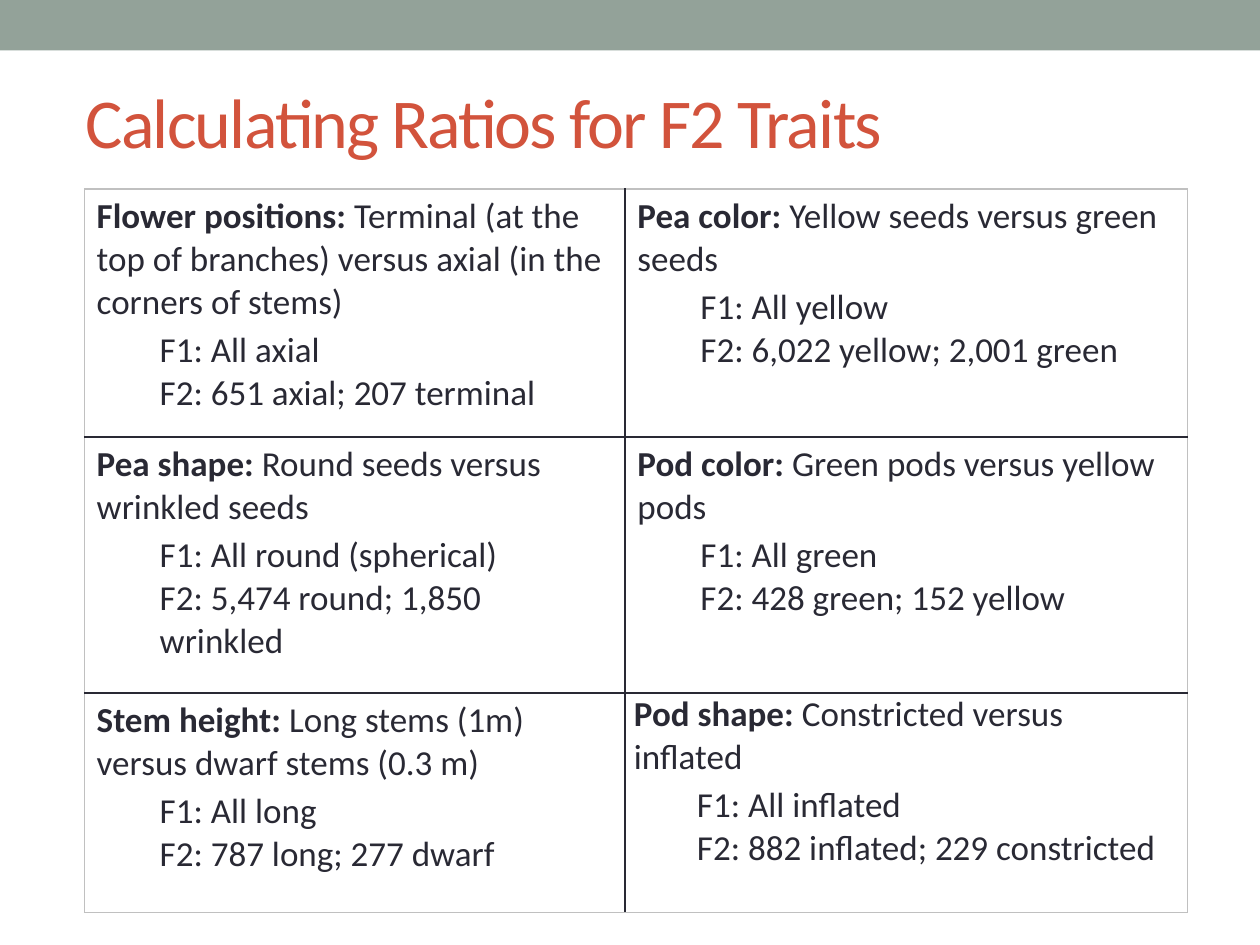
from lxml.etree import SubElement
from pptx import Presentation
from pptx.dml.color import RGBColor
from pptx.enum.shapes import MSO_SHAPE as Shape
from pptx.enum.text import MSO_ANCHOR as Anchor
from pptx.oxml import parse_xml
from pptx.oxml.ns import nsdecls, qn
from pptx.util import Cm, Pt

SAGE = RGBColor(0x93, 0xA2, 0x99)
RUST = RGBColor(0xD2, 0x53, 0x3C)
INK = RGBColor(0x29, 0x29, 0x34)
SILVER = RGBColor(0xC0, 0xC0, 0xC0)

TRAITS = [
    [("Flower positions: ", "Terminal (at the top of branches) versus axial (in the corners of stems)",
      "F1: All axial", "F2: 651 axial; 207 terminal"),
     ("Pea color: ", "Yellow seeds versus green seeds",
      "F1: All yellow", "F2: 6,022 yellow; 2,001 green")],
    [("Pea shape: ", "Round seeds versus wrinkled seeds",
      "F1: All round (spherical)", "F2: 5,474 round; 1,850 wrinkled"),
     ("Pod color: ", "Green pods versus yellow pods",
      "F1: All green", "F2: 428 green; 152 yellow")],
    [("Stem height: ", "Long stems (1m) versus dwarf stems (0.3 m)",
      "F1: All long", "F2: 787 long; 277 dwarf"),
     ("Pod shape: ", "Constricted versus inflated",
      "F1: All inflated", "F2: 882 inflated; 229 constricted")],
]
COLUMN_WIDTHS = [10.9, 11.33]
ROW_HEIGHTS = [5, 5.16, 4.42]
CELL_MARGINS = {"margin_left": Cm(0.25), "margin_right": Cm(0.38),
                "margin_top": Cm(0.13), "margin_bottom": Cm(0.13)}
TIGHT_MARGINS = {"margin_left": Cm(0.18), "margin_top": 0, "margin_bottom": 0}


def apply(target, values):
    """Set every attribute named in values on the target."""
    for name, value in values.items():
        setattr(target, name, value)


class TraitSlide:
    """Holds the text style and the current slide."""

    body = {"name": "Calibri", "size": Pt(20)}
    heading = {"name": "Calibri", "size": Pt(40)}

    def __init__(self, deck):
        self.slide = deck.slides.add_slide(deck.slide_layouts[5])

    def band(self, width, height):
        band = self.slide.shapes.add_shape(Shape.RECTANGLE, 0, 0, Cm(width), Cm(height))
        band.shadow.inherit = False
        band.fill.solid()
        band.fill.fore_color.rgb = SAGE
        band.line.fill.background()

    def title(self, text, left, top, width, height):
        title = self.slide.shapes.title
        apply(title, {"left": Cm(left), "top": Cm(top), "width": Cm(width), "height": Cm(height)})
        title.text_frame.vertical_anchor = Anchor.MIDDLE
        paragraph = title.text_frame.paragraphs[0]
        paragraph.alignment = 1
        run = self.run(paragraph, text, self.heading, RUST)
        run.font._element.set("spc", "-100")

    def run(self, paragraph, text, style, color, bold=False):
        run = paragraph.add_run()
        run.text = text
        apply(run.font, {**style, "bold": bold})
        run.font.color.rgb = color
        return run

    def trait(self, cell, name, contrast, *generations):
        frame = cell.text_frame
        self.run(frame.paragraphs[0], name, self.body, INK, bold=True)
        self.run(frame.paragraphs[0], contrast, self.body, INK)
        for index, generation in enumerate(generations):
            paragraph = frame.add_paragraph()
            paragraph.space_before = Pt(0 if index else 3)
            paragraph._p.get_or_add_pPr().set("marL", str(Cm(1.27)))
            self.run(paragraph, generation, self.body, INK)

    def borders(self, cell, outer_sides):
        properties = cell._tc.get_or_add_tcPr()
        for index, side in enumerate("LRTB"):
            color, width = (SILVER, Pt(0.75)) if side in outer_sides else (INK, Pt(1))
            line = parse_xml(f'<a:ln{side} {nsdecls("a")} w="{width}"/>')
            fill = SubElement(line, qn("a:solidFill"))
            SubElement(fill, qn("a:srgbClr")).set("val", str(color))
            properties.insert(index, line)

    def table(self, traits, left, top):
        rows, columns = len(traits), len(traits[0])
        table = self.slide.shapes.add_table(
            rows, columns, Cm(left), Cm(top),
            Cm(sum(COLUMN_WIDTHS)), Cm(sum(ROW_HEIGHTS))).table
        apply(table, {"first_row": False, "horz_banding": False})
        for column, width in zip(table.columns, COLUMN_WIDTHS):
            column.width = Cm(width)
        for row, height in zip(table.rows, ROW_HEIGHTS):
            row.height = Cm(height)
        for r, trait_row in enumerate(traits):
            for c, trait in enumerate(trait_row):
                cell = table.cell(r, c)
                cell.fill.background()
                is_last = (r, c) == (rows - 1, columns - 1)
                apply(cell, {**CELL_MARGINS, **(TIGHT_MARGINS if is_last else {})})
                self.trait(cell, *trait)
                edges = {"L": c == 0, "R": c == columns - 1, "T": r == 0, "B": r == rows - 1}
                self.borders(cell, [side for side, outer in edges.items() if outer])


def main():
    deck = Presentation()
    apply(deck, {"slide_width": Cm(25.4), "slide_height": Cm(19.05)})
    traits = TraitSlide(deck)
    traits.band(25.4, 1.02)
    traits.title("Calculating Ratios for F2 Traits", 1.47, 1.07, 22.86, 2.72)
    traits.table(TRAITS, 1.7, 3.81)
    deck.save("out.pptx")


if __name__ == "__main__":
    main()
